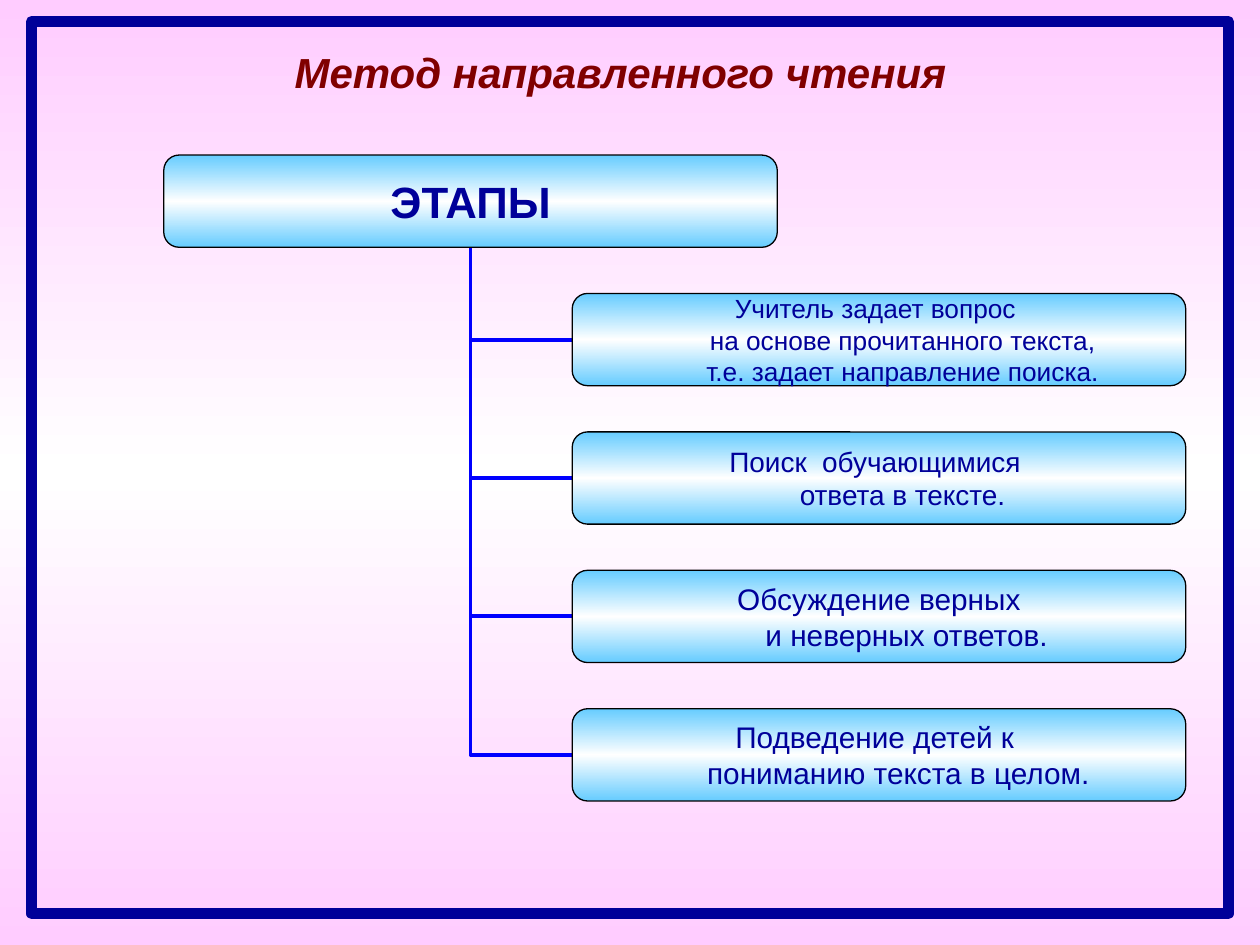
import copy
import pptx
import pptx.dml.color
import pptx.enum.shapes
import pptx.enum.text
import pptx.oxml.ns
import pptx.util

Pt = pptx.util.Pt
SHAPE = pptx.enum.shapes.MSO_SHAPE
NAVY = "000099"
BOX_W, BOX_H = 350.6, 52.7
ROOT_X, ROOT_Y = 93.6, 88.6
STAGE_X, STEP = 327, 79.1
STAGES = [
    ("Учитель задает вопрос \v на основе прочитанного текста, \v"
     "т.е. задает направление поиска.", 15),
    ("Поиск  обучающимися \vответа в тексте.", 16),
    ("Обсуждение верных\v и неверных ответов.", 17),
    ("Подведение детей к \vпониманию текста в целом. ", 17),
]


def rgb(value):
    return pptx.dml.color.RGBColor.from_string(value)


def set_line(line, color, width):
    line.color.rgb = rgb(color)
    line.width = Pt(width)


def set_gradient(fill, element, edge):
    fill.gradient()
    fill.gradient_angle = 270
    stops = next(element.iter(pptx.oxml.ns.qn("a:gsLst")))
    stops.insert(1, copy.deepcopy(stops[0]))
    for stop, color, position in zip(fill.gradient_stops, (edge, "FFFFFF", edge), (0, 0.5, 1)):
        stop.color.rgb = rgb(color)
        stop.position = position


def set_text(sp, text, size, color, bold=False, italic=False):
    tf = sp.text_frame
    tf.word_wrap = False
    tf.vertical_anchor = pptx.enum.text.MSO_ANCHOR.MIDDLE
    p = tf.paragraphs[0]
    p.text = text
    p.alignment = pptx.enum.text.PP_ALIGN.CENTER
    p.font.name = "Arial"
    p.font.size = Pt(size)
    p.font.bold = bold
    p.font.italic = italic
    p.font.color.rgb = rgb(color)
    return p


def add_frame(shapes):
    sp = shapes.add_shape(SHAPE.RECTANGLE, Pt(18), Pt(12.2), Pt(684), Pt(510))
    sp.shadow.inherit = False
    sp.fill.background()
    set_line(sp.line, NAVY, 6)


def add_title(shapes, text):
    sp = shapes.add_textbox(Pt(160.5), Pt(23), Pt(388), Pt(36))
    set_text(sp, text, 24, "800000", bold=True, italic=True)


def add_box(shapes, x, y, text, size, bold=False):
    sp = shapes.add_shape(SHAPE.ROUNDED_RECTANGLE, Pt(x), Pt(y), Pt(BOX_W), Pt(BOX_H))
    sp.shadow.inherit = False
    set_gradient(sp.fill, sp._element, "66CCFF")
    set_line(sp.line, "000000", 0.75)
    tf = sp.text_frame
    tf.margin_left = tf.margin_top = tf.margin_right = tf.margin_bottom = 0
    return set_text(sp, text, size, NAVY, bold)


def add_elbow(shapes, y):
    cn = shapes.add_connector(
        pptx.enum.shapes.MSO_CONNECTOR.ELBOW,
        Pt(STAGE_X), Pt(y + BOX_H / 2), Pt(ROOT_X + BOX_W / 2), Pt(ROOT_Y + BOX_H))
    set_line(cn.line, "0000FF", 2.25)
    sp_pr = cn._element.spPr
    sp_pr.find(pptx.oxml.ns.qn("a:prstGeom")).set("prst", "bentConnector2")
    sp_pr.append(sp_pr.makeelement(pptx.oxml.ns.qn("a:effectLst"), {}))


def add_stage(shapes, y, text, size):
    p = add_box(shapes, STAGE_X, y, text, size)
    p_pr = p._p.get_or_add_pPr()
    p_pr.set("marL", str(Pt(27)))
    p_pr.set("indent", str(-Pt(27)))


def main():
    prs = pptx.Presentation()
    prs.slide_width, prs.slide_height = Pt(720), Pt(540)
    s = prs.slides.add_slide(prs.slide_layouts[6])
    set_gradient(s.background.fill, s._element, "FFCCFF")
    add_frame(s.shapes)
    add_title(s.shapes, "Метод направленного чтения")

    chart = s.shapes.add_group_shape().shapes
    tops = [ROOT_Y + STEP * (i + 1) for i in range(len(STAGES))]
    for y in reversed(tops):
        add_elbow(chart, y)
    add_box(chart, ROOT_X, ROOT_Y, "ЭТАПЫ", 25, bold=True)
    for y, (text, size) in zip(tops, STAGES):
        add_stage(chart, y, text, size)
    prs.save("out.pptx")


if __name__ == "__main__":
    main()
